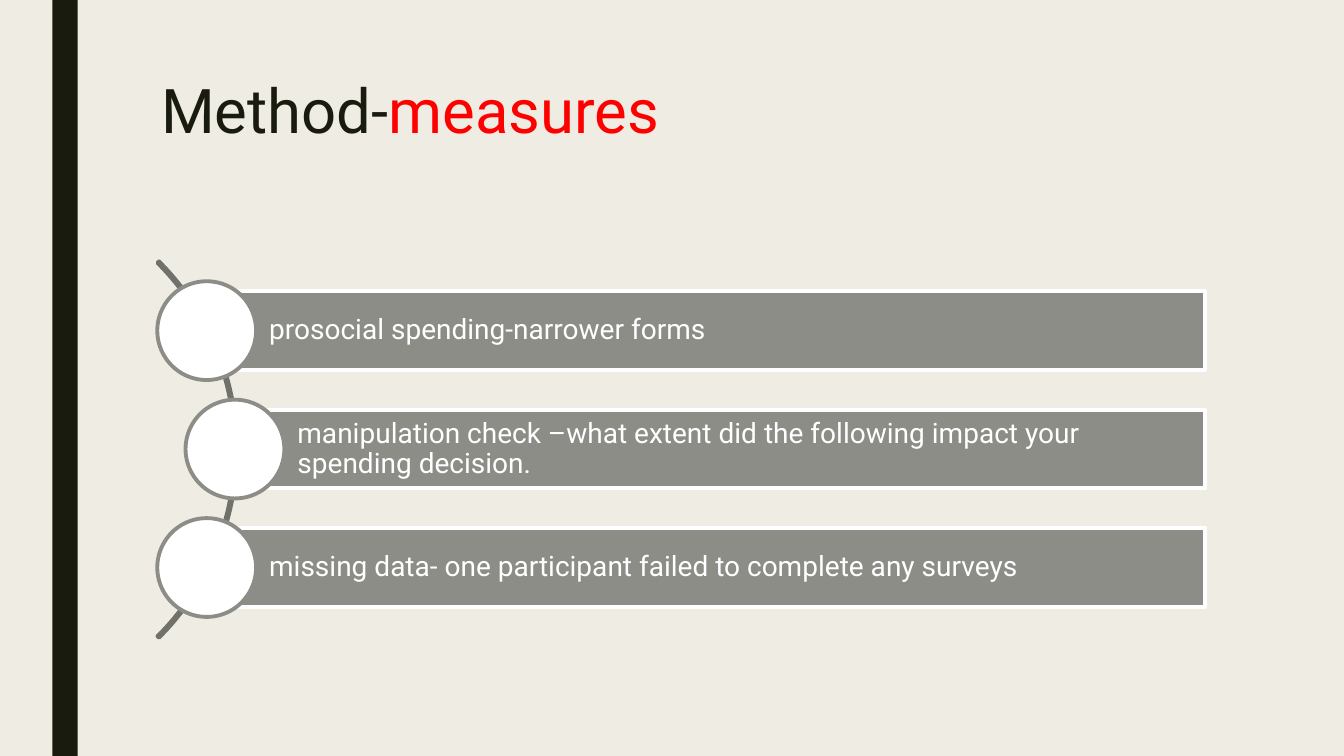
from dataclasses import dataclass

from pptx import Presentation
from pptx.dml.color import RGBColor
from pptx.enum.shapes import MSO_SHAPE
from pptx.enum.text import MSO_ANCHOR, PP_ALIGN
from pptx.util import Inches, Pt


@dataclass(frozen=True)
class Theme:
    paper: str = "EFEDE3"
    ink: str = "191B0E"
    accent: str = "FF0000"
    white: str = "FFFFFF"
    gray: str = "8C8D86"
    arc: str = "70716B"
    font: str = "Roboto"
    title: int = 44
    body: int = 20
    line: float = 2.75


theme = Theme()


def add_part(kind, box, fill=None, line=None):
    part = slide.shapes.add_shape(kind, *[Inches(n) for n in box])
    part.shadow.inherit = False
    if fill:
        part.fill.solid()
        part.fill.fore_color.rgb = RGBColor.from_string(fill)
    else:
        part.fill.background()
    if line:
        part.line.color.rgb = RGBColor.from_string(line)
        part.line.width = Pt(theme.line)
    else:
        part.line.fill.background()
    return part


def add_run(para, text, size=theme.body, color=theme.white, space=0.9):
    para.alignment = PP_ALIGN.LEFT
    para.line_spacing = space
    run = para.add_run()
    run.text = text
    run.font.name = theme.font
    run.font.size = Pt(size)
    run.font.color.rgb = RGBColor.from_string(color)


deck = Presentation()
deck.slide_width, deck.slide_height = Inches(13.33), Inches(7.5)
slide = deck.slides.add_slide(deck.slide_layouts[6])
slide.background.fill.solid()
slide.background.fill.fore_color.rgb = RGBColor.from_string(theme.paper)

# Side stripe and title
add_part(MSO_SHAPE.RECTANGLE, (0.52, 0, 0.25, 7.5), fill=theme.ink)
title = slide.shapes.add_textbox(Inches(1.5), Inches(0.75), Inches(10.5), Inches(1.62))
title.text_frame.word_wrap = True
for text, color in (("Method-", theme.ink), ("measures", theme.accent)):
    add_run(title.text_frame.paragraphs[0], text, size=theme.title, color=color, space=0.89)

# Arc from 315 to 45 degrees, with a very thin band
arc = add_part(MSO_SHAPE.BLOCK_ARC, (-2.93, 1.82, 5.28, 5.28), line=theme.arc)
for i, turn in enumerate((189, 27, 0.004)):
    arc.adjustments[i] = turn

# Bars share a right edge; each dot is centred on the left end of its bar
right, high, dot = 11.95, 0.78, 0.98
first, step = 3.28, 1.175
items = (
    (2.05, "prosocial spending-narrower forms"),
    (2.33, "manipulation check –what extent did the following impact your spending decision."),
    (2.05, "missing data- one participant failed to complete any surveys"),
)
for i, (left, text) in enumerate(items):
    mid = first + i * step
    bar = add_part(MSO_SHAPE.RECTANGLE, (left, mid - high / 2, right - left, high),
                   fill=theme.gray, line=theme.white)
    frame = bar.text_frame
    frame.word_wrap = True
    frame.vertical_anchor = MSO_ANCHOR.MIDDLE
    frame.margin_left = Inches(0.62)
    frame.margin_top = frame.margin_right = frame.margin_bottom = Inches(0.06)
    add_run(frame.paragraphs[0], text)
    add_part(MSO_SHAPE.OVAL, (left - dot / 2, mid - dot / 2, dot, dot),
             fill=theme.white, line=theme.gray)

deck.save("out.pptx")
